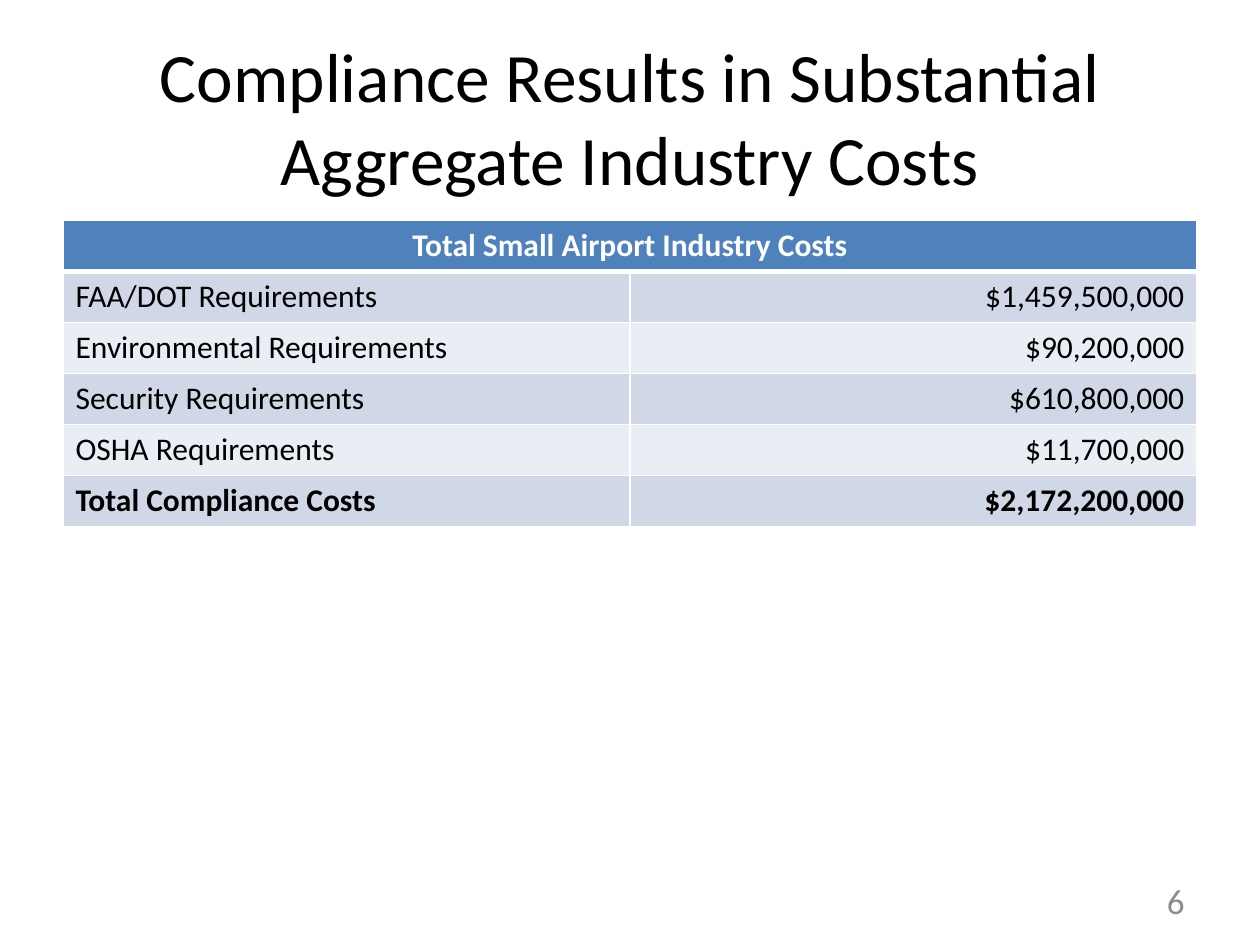
from lxml import etree
from pptx import Presentation
from pptx.dml.color import RGBColor
from pptx.enum.text import MSO_ANCHOR, PP_ALIGN
from pptx.oxml.ns import qn
from pptx.util import Inches, Pt

LEFT, CENTER, RIGHT = PP_ALIGN.LEFT, PP_ALIGN.CENTER, PP_ALIGN.RIGHT
MIDDLE = MSO_ANCHOR.MIDDLE
FONT = "Calibri"
BLACK, WHITE, GRAY = "000000", "FFFFFF", "8C8C8C"
HEADER_FILL = "4F81BD"
BAND_FILLS = ("D0D8E8", "E9EDF4")

TABLE_HEADING = "Total Small Airport Industry Costs"
COSTS = [
    ("FAA/DOT Requirements", "$1,459,500,000"),
    ("Environmental Requirements", "$90,200,000"),
    ("Security Requirements", "$610,800,000"),
    ("OSHA Requirements", "$11,700,000"),
    ("Total Compliance Costs", "$2,172,200,000"),
]


def rgb(color):
    """Turn a hex string into a colour."""
    return RGBColor.from_string(color)


def write_text(frame, text, size=18, color=BLACK, bold=False, align=LEFT):
    """Put one formatted paragraph in a text frame."""
    paragraph = frame.paragraphs[0]
    paragraph.alignment = align
    run = paragraph.add_run()
    run.text = text
    run.font.name = FONT
    run.font.size = Pt(size)
    run.font.bold = bold
    run.font.color.rgb = rgb(color)


def add_label(slide, text, left, top, width, height, **style):
    """Add a wrapped, vertically centred text box."""
    label = slide.shapes.add_textbox(
        Inches(left), Inches(top), Inches(width), Inches(height))
    label.text_frame.word_wrap = True
    label.text_frame.vertical_anchor = MIDDLE
    write_text(label.text_frame, text, **style)


def set_borders(cell, color=WHITE, bottom=1):
    """Draw one-point borders, with a chosen weight below."""
    properties = cell._tc.get_or_add_tcPr()
    weights = {"lnL": 1, "lnR": 1, "lnT": 1, "lnB": bottom}
    for side, weight in weights.items():
        border = etree.SubElement(properties, qn(f"a:{side}"), w=str(Pt(weight)))
        fill = etree.SubElement(border, qn("a:solidFill"))
        etree.SubElement(fill, qn("a:srgbClr"), val=color)


def fill_cell(cell, text, fill, bottom=1, **style):
    """Format one table cell and write its text."""
    set_borders(cell, bottom=bottom)
    cell.fill.solid()
    cell.fill.fore_color.rgb = rgb(fill)
    write_text(cell.text_frame, text, **style)


def add_cost_table(slide, left, top, width, height):
    """Add the cost table with a merged heading and banded rows."""
    table = slide.shapes.add_table(
        len(COSTS) + 1, 2,
        Inches(left), Inches(top), Inches(width), Inches(height)).table
    heading, heading_end = table.cell(0, 0), table.cell(0, 1)
    heading.merge(heading_end)
    set_borders(heading_end, bottom=3)
    fill_cell(heading, TABLE_HEADING, HEADER_FILL, bottom=3,
              color=WHITE, bold=True, align=CENTER)
    for row, (requirement, cost) in enumerate(COSTS, start=1):
        style = {"fill": BAND_FILLS[(row - 1) % 2], "bold": row == len(COSTS)}
        if row == 1:
            style["bottom"] = 1
        fill_cell(table.cell(row, 0), requirement, **style)
        fill_cell(table.cell(row, 1), cost, align=RIGHT, **style)
    for column in range(2):
        top_border = table.cell(1, column)._tc.tcPr.find(qn("a:lnT"))
        top_border.set("w", str(Pt(3)))


def main():
    """Build and save the slide."""
    presentation = Presentation()
    presentation.slide_width = Inches(10)
    presentation.slide_height = Inches(7.5)
    slide = presentation.slides.add_slide(presentation.slide_layouts[6])
    add_label(slide, "Compliance Results in Substantial Aggregate Industry Costs",
              0.5, 0.3, 9, 1.25, size=39.6, align=CENTER)
    add_cost_table(slide, 0.5, 1.75, 9, 2.43)
    add_label(slide, "6", 7.17, 6.95, 2.33, 0.4,
              size=20, color=GRAY, align=RIGHT)


    presentation.save("out.pptx")


if __name__ == "__main__":
    main()
